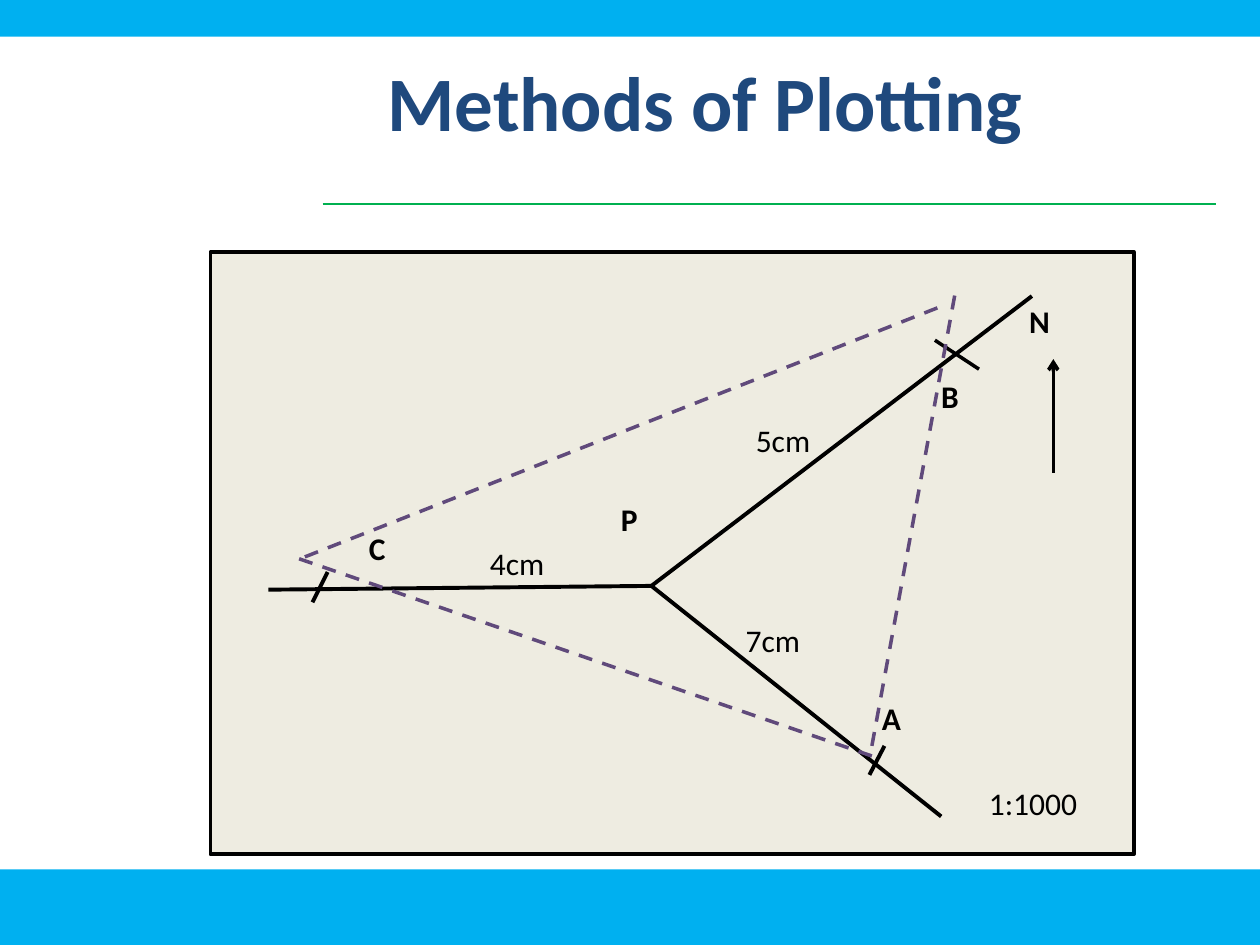
import pptx
import pptx.util
import pptx.dml.color
import pptx.enum.dml
import pptx.enum.shapes
import pptx.enum.text
import pptx.oxml.ns
from lxml import etree
from pptx.util import Inches

RGBColor = pptx.dml.color.RGBColor
SKY = RGBColor(0x00, 0xB0, 0xF0)
GREEN = RGBColor(0x00, 0xB0, 0x50)
NAVY = RGBColor(0x1F, 0x49, 0x7D)
PAPER = RGBColor(0xEE, 0xEC, 0xE1)
PURPLE = RGBColor(0x60, 0x4A, 0x7B)
BLACK = RGBColor(0, 0, 0)


def add_block(slide, box, fill, outline=None):
    """Draw a filled rectangle, outlined when a colour is given."""
    left, top, width, height = map(Inches, box)
    block = slide.shapes.add_shape(
        pptx.enum.shapes.MSO_SHAPE.RECTANGLE, left, top, width, height)
    block.shadow.inherit = False
    block.fill.solid()
    block.fill.fore_color.rgb = fill
    if outline is None:
        block.line.fill.background()
    else:
        block.line.color.rgb = outline
        block.line.width = pptx.util.Pt(2)


def add_line(slide, start, end, color, weight, dashed=False, arrow=False):
    """Draw a straight line between two points."""
    line = slide.shapes.add_connector(
        pptx.enum.shapes.MSO_CONNECTOR.STRAIGHT, *map(Inches, (*start, *end)))
    line.line.color.rgb = color
    line.line.width = pptx.util.Pt(weight)
    if dashed:
        line.line.dash_style = pptx.enum.dml.MSO_LINE.DASH
    qn = pptx.oxml.ns.qn
    properties = line._element.spPr
    if arrow:
        etree.SubElement(properties.find(qn("a:ln")), qn("a:tailEnd"), type="arrow")
    etree.SubElement(properties, qn("a:effectLst"))


def add_text(slide, box, text, size, color, bold):
    """Add a one-line text box and return it."""
    text_box = slide.shapes.add_textbox(*map(Inches, box))
    text_box.text_frame.word_wrap = True
    run = text_box.text_frame.paragraphs[0].add_run()
    run.text = text
    run.font.name = "Calibri"
    run.font.size = pptx.util.Pt(size)
    run.font.bold = bold
    run.font.color.rgb = color
    return text_box


def add_frame(slide, width, height):
    """Draw the top and bottom bands and the rule under the title."""
    add_block(slide, (0, height - 0.6, width, 0.6), SKY)
    add_line(slide, (2.56, 1.62), (9.65, 1.62), GREEN, 0.75)
    add_block(slide, (0, 0, width, 0.29), SKY)


def add_title(slide, box):
    """Add the centred slide title."""
    frame = add_text(slide, box, "Methods of Plotting", 44, NAVY, True).text_frame
    frame.vertical_anchor = pptx.enum.text.MSO_ANCHOR.MIDDLE
    frame.paragraphs[0].alignment = pptx.enum.text.PP_ALIGN.CENTER


def add_plot(slide, box):
    """Draw the radiation plot: rays from P, station ticks, labels, traverse."""
    left, top = box[:2]
    add_block(slide, box, PAPER, BLACK)

    def place(point):
        return left + point[0], top + point[1]

    station = (3.5, 2.65)
    ray_ends = [(6.52, 0.35), (5.8, 4.48), (0.46, 2.68)]
    for ray_end in ray_ends:
        add_line(slide, place(station), place(ray_end), BLACK, 2.25)

    ticks = [((6.1, 0.93), (5.75, 0.7), 2),
             ((5.23, 4.15), (5.35, 3.92), 2.25),
             ((0.81, 2.78), (0.93, 2.54), 2.25)]
    for start, end, weight in ticks:
        add_line(slide, place(start), place(end), BLACK, weight)

    add_line(slide, place((6.69, 1.75)), place((6.69, 0.85)), BLACK, 2, arrow=True)

    labels = [("B", 5.7, 0.94, True), ("5cm", 4.23, 1.29, False),
              ("N", 6.4, 0.35, True), ("7cm", 4.15, 2.88, False),
              ("A", 5.23, 3.5, True), ("4cm", 2.12, 2.27, False),
              ("C", 1.16, 2.15, True), ("P", 3.16, 1.92, True),
              ("1:1000", 6.08, 4.17, False)]
    for text, x, y, bold in labels:
        width = 0.81 if bold else 1.16
        add_text(slide, (*place((x, y)), width, 0.4), text, 18, BLACK, bold)

    traverse = [((5.25, 3.92), (5.91, 0.33)),
                ((5.25, 4), (0.66, 2.42)),
                ((0.75, 2.42), (5.83, 0.42))]
    for start, end in traverse:
        add_line(slide, place(start), place(end), PURPLE, 2, dashed=True)


def main():
    """Build the slide and save it."""
    presentation = pptx.Presentation()
    presentation.slide_width = Inches(10)
    presentation.slide_height = Inches(7.5)
    slide = presentation.slides.add_slide(presentation.slide_layouts[6])
    add_frame(slide, 10, 7.5)
    add_title(slide, (1.5, 0.17, 8.2, 1.25))
    add_plot(slide, (1.67, 2, 7.33, 4.78))
    presentation.save("out.pptx")


if __name__ == "__main__":
    main()
